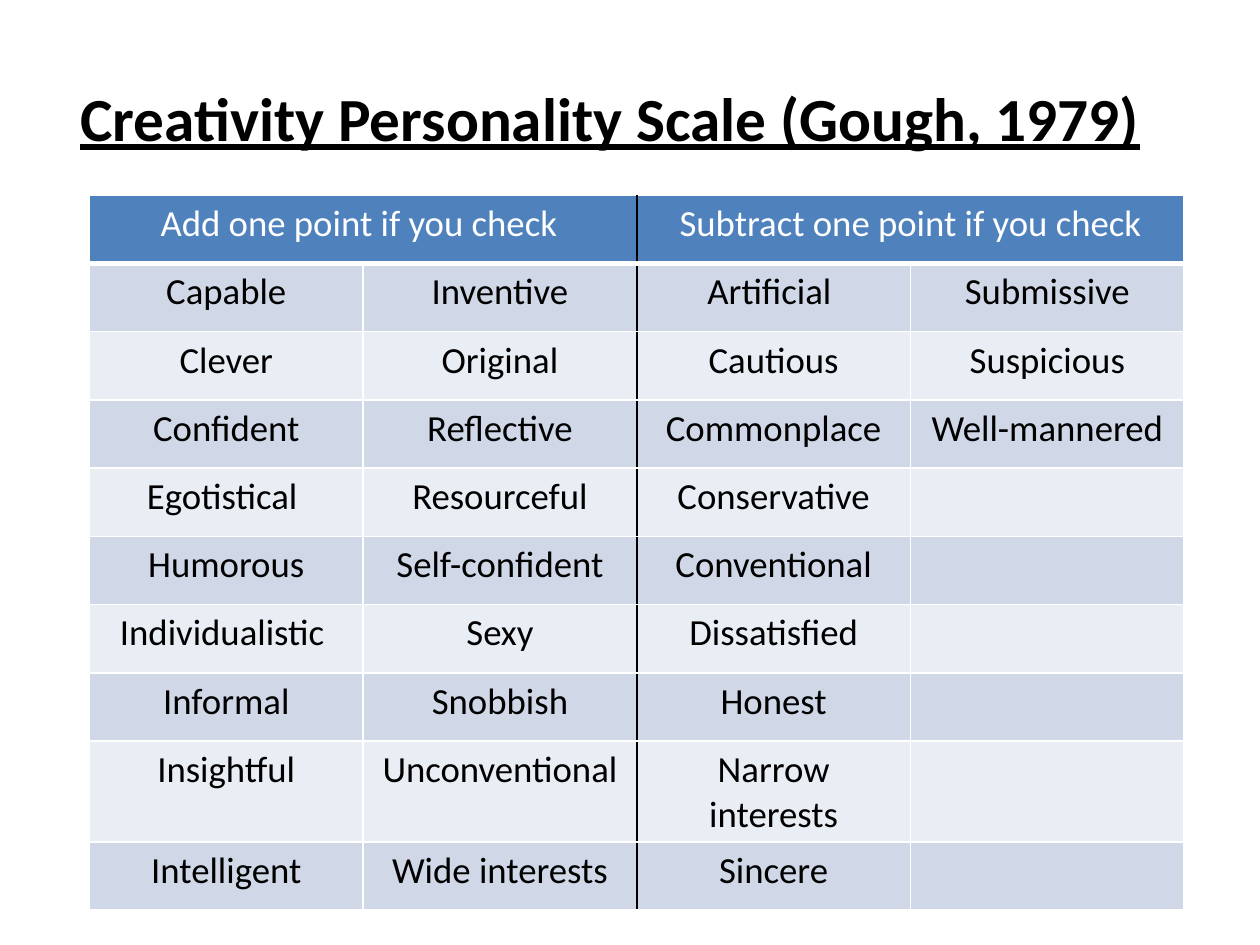
from lxml import etree
from pptx import Presentation
from pptx.dml.color import RGBColor
from pptx.enum.text import MSO_ANCHOR, PP_ALIGN
from pptx.oxml.ns import qn
from pptx.util import Pt

CENTER = PP_ALIGN.CENTER
MIDDLE = MSO_ANCHOR.MIDDLE

WHITE, BLACK = "FFFFFF", "000000"
HEADER_FILL = "4F81BD"
BAND_FILLS = ("D0D8E8", "E9EDF4")
TITLE_FORMAT = {"name": "Calibri", "size": Pt(35), "bold": True, "underline": True}
CELL_FORMAT = {"name": "Calibri", "size": Pt(21), "bold": False}

COLUMN_WIDTH, ROW_HEIGHT = 156.4, 39
GROUP_SPAN = 2
HEADERS = ("Add one point if you check ", "Subtract one point if you check")
TRAITS = (
    ("Capable", "Inventive", "Artificial ", "Submissive"),
    ("Clever", "Original", "Cautious", "Suspicious"),
    ("Confident", "Reflective", "Commonplace", "Well-mannered"),
    ("Egotistical ", "Resourceful", "Conservative", ""),
    ("Humorous", "Self-confident", "Conventional", ""),
    ("Individualistic ", "Sexy", "Dissatisfied", ""),
    ("Informal", "Snobbish", "Honest", ""),
    ("Insightful", "Unconventional", "Narrow interests", ""),
    ("Intelligent", "Wide interests", "Sincere", ""),
)


def color(hex_string):
    return RGBColor.from_string(hex_string)


def write_text(text_frame, text, font_format, text_color):
    paragraph = text_frame.paragraphs[0]
    paragraph.alignment = CENTER
    if not text:
        return
    run = paragraph.add_run()
    run.text = text
    for attribute, value in font_format.items():
        setattr(run.font, attribute, value)
    run.font.color.rgb = color(text_color)


def add_title(slide, text):
    shape = slide.shapes.add_textbox(Pt(36), Pt(21.6), Pt(625.6), Pt(90))
    shape.text_frame.word_wrap = True
    shape.text_frame.vertical_anchor = MIDDLE
    write_text(shape.text_frame, text, TITLE_FORMAT, BLACK)


def set_border(cell, side, line_color, width):
    properties = cell._tc.get_or_add_tcPr()
    line = etree.SubElement(properties, qn(f"a:ln{side}"), w=str(Pt(width)))
    fill = etree.SubElement(line, qn("a:solidFill"))
    etree.SubElement(fill, qn("a:srgbClr"), val=line_color)


def format_cell(cell, text, fill_color, text_color, edges, bottom_width=1):
    left_color, right_color = edges
    # Borders come before the fill in the cell properties
    set_border(cell, "L", left_color, 1)
    set_border(cell, "R", right_color, 1)
    set_border(cell, "T", WHITE, 1)
    set_border(cell, "B", WHITE, bottom_width)
    cell.fill.solid()
    cell.fill.fore_color.rgb = color(fill_color)
    write_text(cell.text_frame, text, CELL_FORMAT, text_color)


def edge_colors(first_column, last_column):
    """A black line divides the two scoring groups."""
    left = BLACK if first_column == GROUP_SPAN else WHITE
    right = BLACK if last_column == GROUP_SPAN - 1 else WHITE
    return left, right


def add_trait_table(slide):
    row_count, column_count = len(TRAITS) + 1, len(TRAITS[0])
    table = slide.shapes.add_table(
        row_count, column_count, Pt(51.1), Pt(111.6),
        Pt(COLUMN_WIDTH * column_count), Pt(ROW_HEIGHT * row_count)).table
    for column in table.columns:
        column.width = Pt(COLUMN_WIDTH)
    for row in table.rows:
        row.height = Pt(ROW_HEIGHT)

    # Header row: one merged cell for each group
    for group, header in enumerate(HEADERS):
        first = group * GROUP_SPAN
        last = first + GROUP_SPAN - 1
        cell = table.cell(0, first)
        cell.merge(table.cell(0, last))
        format_cell(cell, header, HEADER_FILL, WHITE, edge_colors(first, last), 3)

    # Banded trait rows
    for row_index, traits in enumerate(TRAITS):
        fill_color = BAND_FILLS[row_index % 2]
        for column_index, trait in enumerate(traits):
            format_cell(table.cell(row_index + 1, column_index), trait, fill_color,
                        BLACK, edge_colors(column_index, column_index))


def main():
    presentation = Presentation()
    presentation.slide_width = Pt(720)
    presentation.slide_height = Pt(540)
    slide = presentation.slides.add_slide(presentation.slide_layouts[6])
    add_title(slide, "Creativity Personality Scale (Gough, 1979)")
    add_trait_table(slide)
    presentation.save("out.pptx")


if __name__ == "__main__":
    main()
